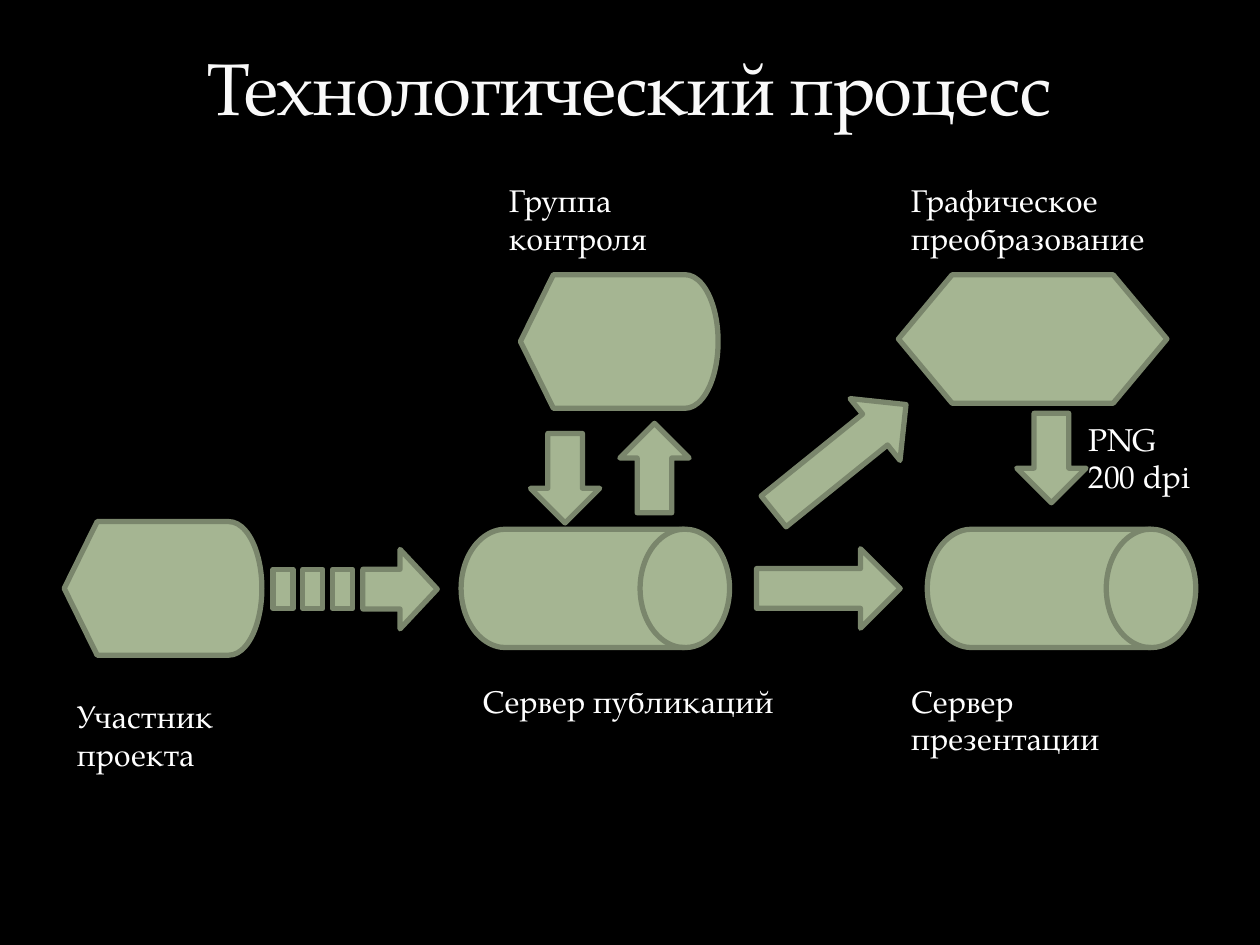
from pptx import Presentation
from pptx.dml.color import RGBColor
from pptx.enum.shapes import MSO_SHAPE
from pptx.enum.text import MSO_ANCHOR, PP_ALIGN
from pptx.util import Pt

COLORS = {"background": "000000", "title": "F9F9F9", "text": "FFFFFF",
          "fill": "A5B592", "line": "7A866C"}
LABEL = {"name": "TeX Gyre Pagella", "size": Pt(18)}
TITLE = {**LABEL, "size": Pt(42)}
DISPLAY_SIZE = (113, 76.3)
DRUM_SIZE = (153.4, 67.7)
SMALL_ARROW_SIZE = (39.6, 51.1)
STRIPE_SIZE = (11.5, 22.3)


class ProcessSlide:
    """Draws the elements of a process diagram in one style."""

    def __init__(self, slide):
        self.slide = slide
        background = slide.background.fill
        background.solid()
        background.fore_color.rgb = self.color("background")

    def color(self, name):
        return RGBColor.from_string(COLORS[name])

    def node(self, kind, left, top, size, rotation=0):
        lengths = [Pt(value) for value in (left, top, *size)]
        shape = self.slide.shapes.add_shape(kind, *lengths)
        shape.rotation = rotation
        shape.shadow.inherit = False
        shape.fill.solid()
        shape.fill.fore_color.rgb = self.color("fill")
        shape.line.color.rgb = self.color("line")
        shape.line.width = Pt(3)

    def text(self, lines, left, top, width, height, values=LABEL,
             color="text", alignment=PP_ALIGN.LEFT, anchor=MSO_ANCHOR.TOP):
        lengths = [Pt(value) for value in (left, top, width, height)]
        frame = self.slide.shapes.add_textbox(*lengths).text_frame
        frame.word_wrap = True
        frame.vertical_anchor = anchor
        frame.text = "\n".join(lines)
        for paragraph in frame.paragraphs:
            paragraph.alignment = alignment
            for run in paragraph.runs:
                for name, value in values.items():
                    setattr(run.font, name, value)
                run.font.color.rgb = self.color(color)

    def title(self, wording, left, top, width, height):
        self.text([wording], left, top, width, height, TITLE, "title",
                  PP_ALIGN.CENTER, MSO_ANCHOR.BOTTOM)
        for run in self.slide.shapes[-1].text_frame.paragraphs[0].runs:
            run.font._element.set("spc", "-100")


def main():
    presentation = Presentation()
    presentation.slide_width, presentation.slide_height = Pt(720), Pt(540)
    process = ProcessSlide(presentation.slides.add_slide(presentation.slide_layouts[6]))

    process.title("Технологический процесс", 36, 12.2, 648, 65.5)

    for left, top in ((36.7, 298.1), (297.4, 157)):
        process.node(MSO_SHAPE.FLOWCHART_DISPLAY, left, top, DISPLAY_SIZE)
    for left in (263.5, 529.9):
        process.node(MSO_SHAPE.FLOWCHART_DIRECT_ACCESS_STORAGE, left, 302.4, DRUM_SIZE)
    process.node(MSO_SHAPE.FLOWCHART_PREPARATION, 513.4, 157, (153.4, 73.4))

    for left, top, length, rotation in ((205.9, 315.4, 42.5, 270),
                                        (450.7, 295.2, 82.1, 270),
                                        (457.2, 213.1, 97.2, 231.1)):
        process.node(MSO_SHAPE.DOWN_ARROW, left, top, (45.4, length), rotation)
    for left, top, rotation in ((354.2, 241.9, 0), (303.1, 247.7, 180), (581, 236.2, 180)):
        process.node(MSO_SHAPE.UP_ARROW, left, top, SMALL_ARROW_SIZE, rotation)
    for index in range(3):
        process.node(MSO_SHAPE.FLOWCHART_PROCESS, 156 + 17 * index, 325.4, STRIPE_SIZE)

    for lines, left, top, width, height in (
        (["Сервер публикаций"], 268.6, 385.9, 182.9, 29),
        (["Группа контроля"], 283.7, 100.1, 150, 51),
        (["Сервер презентации"], 513.4, 385.9, 182, 51),
        (["Графическое", "преобразование"], 513.4, 100.1, 150, 51),
        (["PNG", "200 dpi"], 614.9, 236.2, 72.7, 51),
        (["Участник", "проекта"], 36.7, 394.6, 108.7, 51),
    ):
        process.text(lines, left, top, width, height)

    presentation.save("out.pptx")


if __name__ == "__main__":
    main()
